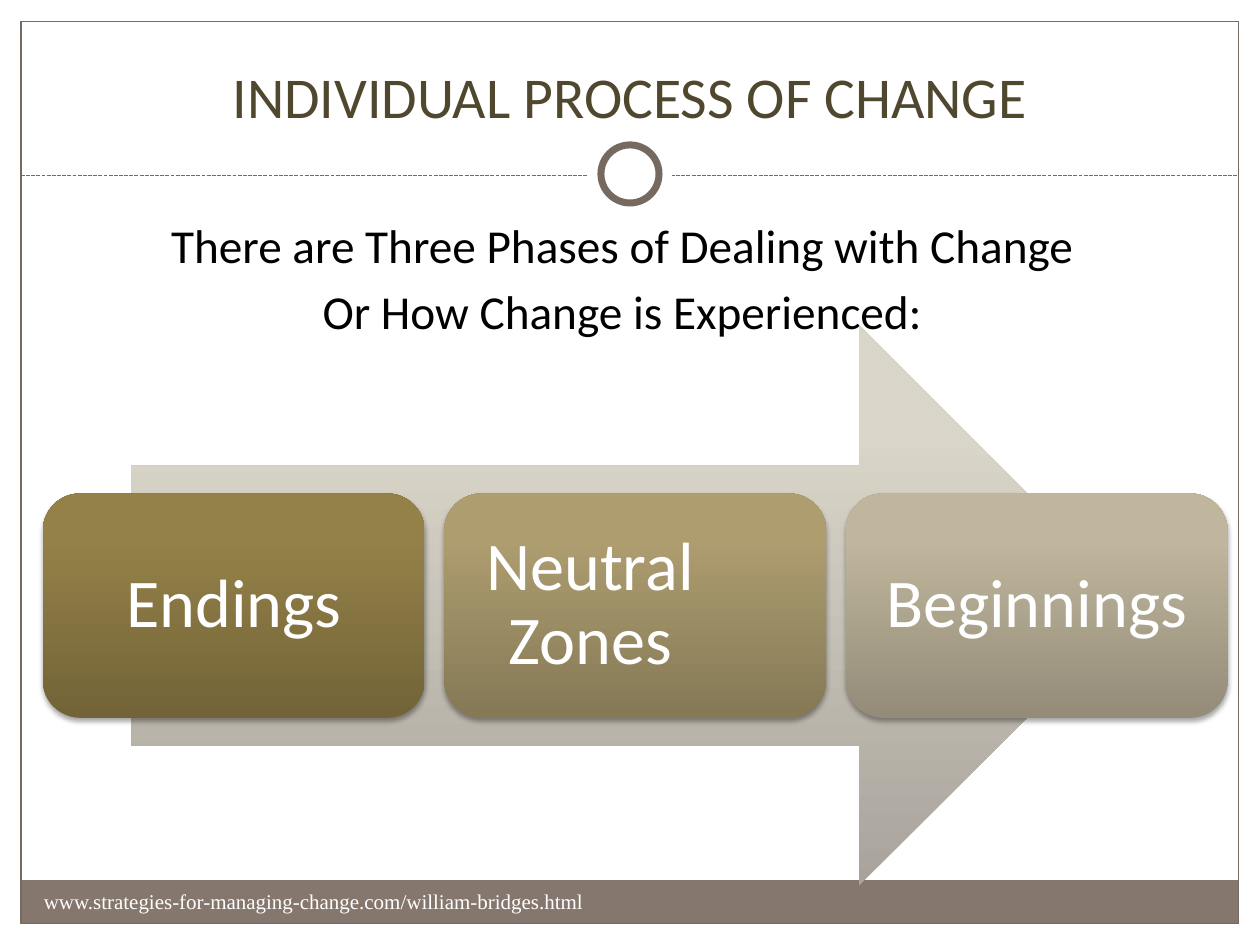
import pptx
import pptx.util
import lxml.etree
import pptx.oxml.ns
from pptx.dml.color import RGBColor
from pptx.enum.dml import MSO_LINE
from pptx.enum.shapes import MSO_CONNECTOR, MSO_SHAPE
from pptx.enum.text import MSO_ANCHOR, PP_ALIGN

Pt = pptx.util.Pt
qn = pptx.oxml.ns.qn

WHITE = RGBColor(0xFF, 0xFF, 0xFF)
BLACK = RGBColor(0x00, 0x00, 0x00)
TAUPE = RGBColor(0x75, 0x69, 0x60)
FOOTER = RGBColor(0x85, 0x77, 0x6D)
OLIVE = RGBColor(0x4F, 0x47, 0x2E)
ARROW = (RGBColor(0xA8, 0xA4, 0x9B), RGBColor(0xDA, 0xD5, 0xC9))
ENDINGS = (RGBColor(0x72, 0x64, 0x38), RGBColor(0x94, 0x81, 0x48))
NEUTRAL = (RGBColor(0x85, 0x79, 0x56), RGBColor(0xAD, 0x9D, 0x6F))
BEGINNINGS = (RGBColor(0x94, 0x8C, 0x79), RGBColor(0xC0, 0xB6, 0x9D))

CARD_LEFT, CARD_TOP, CARD_PITCH = 24.5, 282, 229.4
CARD_WIDTH, CARD_HEIGHT = 218.2, 128.2
CARD_INSET = 11.5
PHASES = [
    ("Endings", ENDINGS, CARD_INSET),
    ("Neutral Zones", NEUTRAL, 63),
    ("Beginnings", BEGINNINGS, CARD_INSET),
]


def add_shape(slide, kind, left, top, width, height,
              fill=None, gradient=None, line=None, weight=0.75):
    shape = slide.shapes.add_shape(kind, Pt(left), Pt(top), Pt(width), Pt(height))
    shape.shadow.inherit = False
    if gradient:
        shape.fill.gradient()
        shape.fill.gradient_angle = 90
        for stop, color, position in zip(shape.fill.gradient_stops, gradient, (0, 0.8)):
            stop.color.rgb = color
            stop.position = position
    elif fill is not None:
        shape.fill.solid()
        shape.fill.fore_color.rgb = fill
    else:
        shape.fill.background()
    if line is None:
        shape.line.fill.background()
    else:
        shape.line.color.rgb = line
        shape.line.width = Pt(weight)
    return shape


def add_drop_shadow(shape):
    effects = shape._element.spPr.find(qn("a:effectLst"))
    shadow = lxml.etree.SubElement(effects, qn("a:outerShdw"), blurRad=str(Pt(3.1)),
                                   dist=str(Pt(1.8)), dir="5400000", rotWithShape="0")
    color = lxml.etree.SubElement(shadow, qn("a:srgbClr"), val="000000")
    lxml.etree.SubElement(color, qn("a:alpha"), val="35000")


def write_text(shape, lines, size, color, font="Calibri", align=PP_ALIGN.CENTER,
               anchor=MSO_ANCHOR.TOP, insets=(7.2, 3.6, 7.2, 3.6), spacing=None, before=0):
    frame = shape.text_frame
    frame.word_wrap = True
    frame.vertical_anchor = anchor
    frame.margin_left, frame.margin_top, frame.margin_right, frame.margin_bottom = map(Pt, insets)
    for index, line in enumerate(lines):
        para = frame.add_paragraph() if index else frame.paragraphs[0]
        para.alignment = align
        para.line_spacing = spacing
        para.space_before = Pt(before if index else 0)
        span = para.add_run()
        span.text = line
        span.font.name = font
        span.font.size = Pt(size)
        span.font.color.rgb = color


def add_text(slide, left, top, width, height, lines, **text_format):
    box = slide.shapes.add_textbox(Pt(left), Pt(top), Pt(width), Pt(height))
    write_text(box, lines, **text_format)


def add_dashed_rule(slide, left, right, top):
    rule = slide.shapes.add_connector(MSO_CONNECTOR.STRAIGHT, Pt(left), Pt(top), Pt(right), Pt(top))
    rule.line.color.rgb = TAUPE
    rule.line.width = Pt(0.75)
    rule.line.dash_style = MSO_LINE.SQUARE_DOT
    lxml.etree.SubElement(rule._element.spPr, qn("a:effectLst"))


def add_page_frame(slide):
    add_shape(slide, MSO_SHAPE.RECTANGLE, 11.8, 503, 695.8, 24.5, fill=FOOTER)
    add_shape(slide, MSO_SHAPE.RECTANGLE, 12, 12.2, 695.8, 515.5, line=TAUPE)
    add_dashed_rule(slide, 12, 707.8, 100.5)
    add_shape(slide, MSO_SHAPE.OVAL, 336, 75.6, 48, 48, fill=WHITE)
    add_shape(slide, MSO_SHAPE.OVAL, 343.4, 82.8, 33.2, 33.2, fill=WHITE, line=TAUPE, weight=4)


def add_phase_card(slide, index, label, gradient, right_inset):
    card = add_shape(slide, MSO_SHAPE.ROUNDED_RECTANGLE, CARD_LEFT + index * CARD_PITCH,
                     CARD_TOP, CARD_WIDTH, CARD_HEIGHT, gradient=gradient)
    add_drop_shadow(card)
    write_text(card, [label], size=39, color=WHITE, anchor=MSO_ANCHOR.MIDDLE, spacing=0.9,
               insets=(CARD_INSET, CARD_INSET, right_inset, CARD_INSET))


def main():
    deck = pptx.Presentation()
    deck.slide_width, deck.slide_height = Pt(720), Pt(540)
    page = deck.slides.add_slide(deck.slide_layouts[6])
    add_page_frame(page)
    add_text(page, 20.7, 120.2, 669.6, 360,
             ["There are Three Phases of Dealing with Change", "Or How Change is Experienced:"],
             size=27, color=BLACK, before=5.4)
    add_text(page, 24, 18, 672, 60, ["INDIVIDUAL PROCESS OF CHANGE"],
             size=33, color=OLIVE, anchor=MSO_ANCHOR.BOTTOM)
    add_shape(page, MSO_SHAPE.RIGHT_ARROW, 75, 186, 576, 320, gradient=ARROW)
    for index, phase in enumerate(PHASES):
        add_phase_card(page, index, *phase)
    add_text(page, 18, 504, 402, 23,
             ["www.strategies-for-managing-change.com/william-bridges.html"],
             size=12, color=WHITE, font="Times New Roman", align=PP_ALIGN.LEFT)
    deck.save("out.pptx")


if __name__ == "__main__":
    main()
